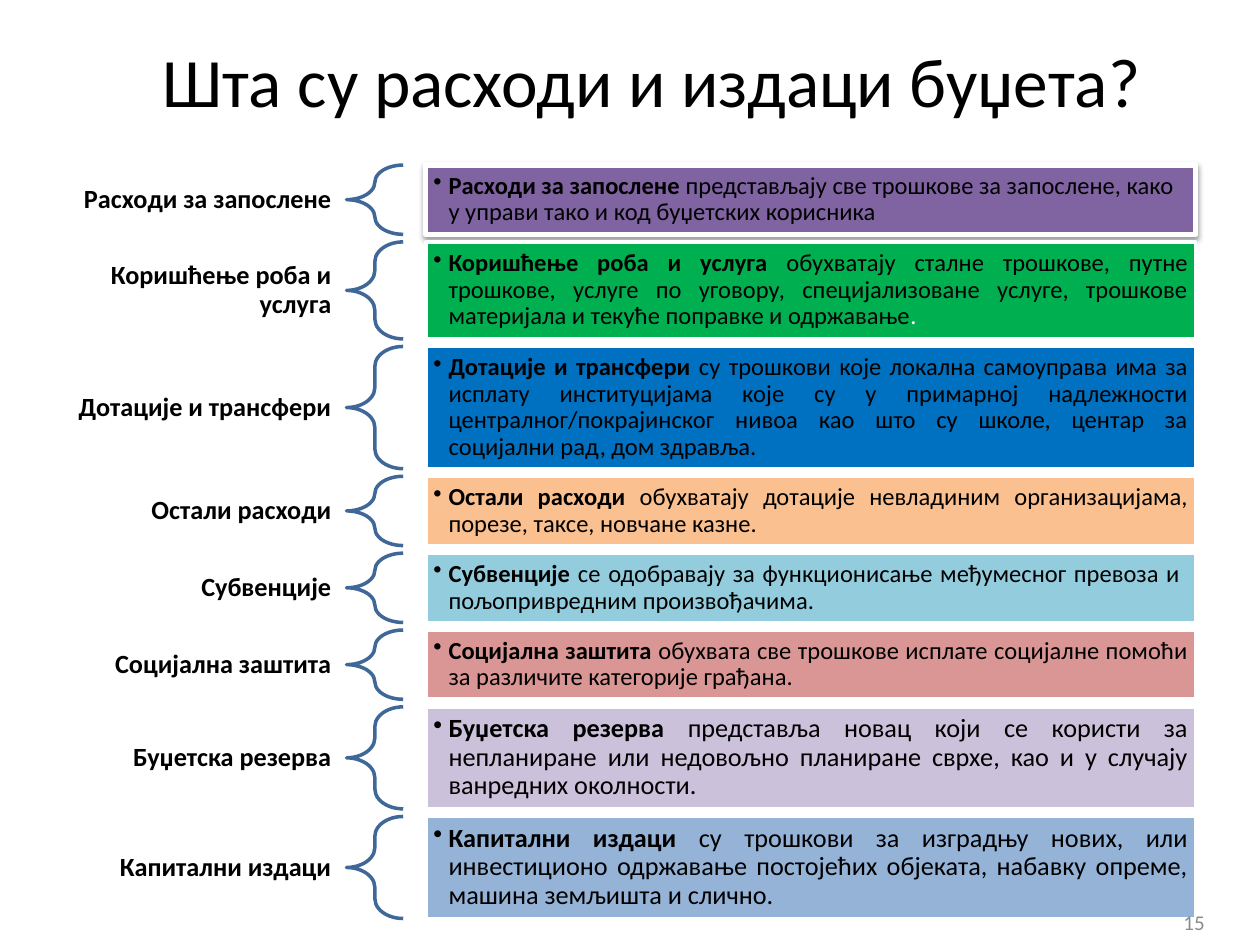
"""Build the slide that explains budget expenditures."""
import lxml.etree
import pptx
import pptx.dml.color
import pptx.enum.shapes
import pptx.enum.text
import pptx.oxml
import pptx.oxml.ns
import pptx.util

Inches = pptx.util.Inches
Pt = pptx.util.Pt
RGBColor = pptx.dml.color.RGBColor
SHAPE = pptx.enum.shapes.MSO_SHAPE
ALIGN = pptx.enum.text.PP_ALIGN
MIDDLE = pptx.enum.text.MSO_ANCHOR.MIDDLE
NO_FIT = pptx.enum.text.MSO_AUTO_SIZE.NONE

BLACK = RGBColor(0x00, 0x00, 0x00)
WHITE = RGBColor(0xFF, 0xFF, 0xFF)
GREY = RGBColor(0x8C, 0x8C, 0x8C)
BRACE_BLUE = RGBColor(0x3F, 0x67, 0x97)
PURPLE = RGBColor(0x80, 0x64, 0xA2)
GREEN = RGBColor(0x00, 0xB0, 0x50)
BLUE = RGBColor(0x00, 0x70, 0xC0)
ORANGE = RGBColor(0xFA, 0xC0, 0x90)
AQUA = RGBColor(0x93, 0xCD, 0xDD)
ROSE = RGBColor(0xD9, 0x96, 0x94)
LILAC = RGBColor(0xCC, 0xC1, 0xDA)
SKY = RGBColor(0x95, 0xB3, 0xD7)

FIRST_TOP = 1.31
ROW_GAP = 0.06

# term, explanation, row height, label height, fill, text size
EXPENSES = [
    ("Расходи за запослене", " представљају све трошкове за запослене, како у управи "
     "тако и код буџетских корисника", 0.55, 0.32, PURPLE, 14),
    ("Коришћење роба и услуга", " обухватају сталне трошкове, путне трошкове, услуге по "
     "уговору, специјализоване услуге, трошкове материјала и текуће поправке и одржавање",
     0.77, 0.55, GREEN, 14),
    ("Дотације и трансфери", " су трошкови које локална самоуправа има за исплату "
     "институцијама које су у примарној надлежности централног/покрајинског нивоа као што "
     "су школе, центар за социјални рад, дом здравља. ", 0.97, 0.32, BLUE, 14),
    ("Остали расходи", " обухватају дотације невладиним организацијама, порезе, таксе, "
     "новчане казне.", 0.55, 0.32, ORANGE, 14),
    ("Субвенције", " сe одобравају за функционисање међумесног превоза и  "
     "пољопривредним произвођачима. ", 0.55, 0.32, AQUA, 14),
    ("Социјална заштита", " обухвата све трошкове исплате социјалне помоћи за различите "
     "категорије грађана.", 0.55, 0.32, ROSE, 14),
    ("Буџетска резерва", " представља новац који се користи за непланиране или недовољно "
     "планиране сврхе, као и у случају ванредних околности.", 0.81, 0.32, LILAC, 15),
    ("Капитални издаци", " су трошкови за изградњу нових, или инвестиционо одржавање "
     "постојећих објеката, набавку опреме, машина земљишта и слично.",
     0.81, 0.32, SKY, 15),
]


def apply_format(target, values):
    """Set each attribute named in values on target."""
    for attribute, value in values.items():
        setattr(target, attribute, value)


def format_frame(frame, side, top):
    """Wrap and centre a text frame vertically with the given insets."""
    apply_format(frame, {
        "word_wrap": True, "auto_size": NO_FIT, "vertical_anchor": MIDDLE,
        "margin_left": Inches(side), "margin_right": Inches(side),
        "margin_top": Inches(top), "margin_bottom": Inches(top),
    })


def add_run(paragraph, text, size, color=BLACK, bold=False):
    """Append a formatted run to a paragraph."""
    run = paragraph.add_run()
    run.text = text
    apply_format(run.font, {"name": "Calibri", "size": Pt(size), "bold": bold})
    run.font.color.rgb = color


def add_bullet(paragraph):
    """Give a paragraph a hanging round bullet."""
    properties = paragraph._p.get_or_add_pPr()
    properties.set("marL", str(Inches(0.12)))
    properties.set("indent", str(Inches(-0.12)))
    bullet = lxml.etree.SubElement(properties, pptx.oxml.ns.qn("a:buChar"))
    bullet.set("char", "•")


def add_shadow(shape):
    """Put a soft shadow below a shape."""
    effects = pptx.oxml.parse_xml(
        f'<a:effectLst {pptx.oxml.ns.nsdecls("a")}>'
        f'<a:outerShdw blurRad="{Pt(3.1)}" dist="{Pt(1.6)}" dir="5400000" rotWithShape="0">'
        '<a:srgbClr val="000000"><a:alpha val="38000"/></a:srgbClr>'
        '</a:outerShdw></a:effectLst>')
    properties = shape._element.spPr
    properties.replace(properties.find(pptx.oxml.ns.qn("a:effectLst")), effects)


def add_title(slide, text):
    """Fill and place the title placeholder."""
    title = slide.shapes.title
    apply_format(title, {"left": Inches(0.67), "top": Inches(0.29),
                         "width": Inches(9), "height": Inches(0.68)})
    format_frame(title.text_frame, 0.1, 0.05)
    paragraph = title.text_frame.paragraphs[0]
    paragraph.alignment = ALIGN.CENTER
    add_run(paragraph, text, 39.6)


def add_label(slide, term, middle, height):
    """Add the bold term to the left of its brace."""
    label = slide.shapes.add_textbox(
        Inches(0.5), Inches(middle - height / 2), Inches(2.25), Inches(height))
    format_frame(label.text_frame, 0.12, 0.04)
    paragraph = label.text_frame.paragraphs[0]
    apply_format(paragraph, {"alignment": ALIGN.RIGHT, "line_spacing": 0.9})
    add_run(paragraph, term, 15, bold=True)


def add_brace(slide, top, height):
    """Add the brace that joins a term to its explanation."""
    brace = slide.shapes.add_shape(
        SHAPE.LEFT_BRACE, Inches(2.75), Inches(top), Inches(0.45), Inches(height))
    brace.shadow.inherit = False
    brace.adjustments[0] = 0.35
    brace.adjustments[1] = 0.5
    brace.fill.background()
    brace.line.color.rgb = BRACE_BLUE
    brace.line.width = Pt(2)


def add_explanation(slide, term, explanation, top, height, fill, size):
    """Add a filled box with the bulleted explanation and return it."""
    box = slide.shapes.add_shape(
        SHAPE.RECTANGLE, Inches(3.38), Inches(top), Inches(6.11), Inches(height))
    box.shadow.inherit = False
    box.fill.solid()
    box.fill.fore_color.rgb = fill
    box.line.color.rgb = WHITE
    box.line.width = Pt(2)
    format_frame(box.text_frame, 0.06, 0.06)
    paragraph = box.text_frame.paragraphs[0]
    apply_format(paragraph, {"alignment": ALIGN.JUSTIFY, "level": 1, "line_spacing": 0.9})
    add_bullet(paragraph)
    add_run(paragraph, term, size, bold=True)
    add_run(paragraph, explanation, size)
    return box


def add_page_number(slide, number):
    """Add the page number at the lower right."""
    page = slide.shapes.add_textbox(Inches(7.33), Inches(7.12), Inches(2.33), Inches(0.4))
    format_frame(page.text_frame, 0.1, 0.05)
    paragraph = page.text_frame.paragraphs[0]
    paragraph.alignment = ALIGN.RIGHT
    add_run(paragraph, number, 12, GREY)


def main():
    """Build and save the presentation."""
    presentation = pptx.Presentation()
    apply_format(presentation, {"slide_width": Inches(10), "slide_height": Inches(7.5)})
    slide = presentation.slides.add_slide(presentation.slide_layouts[5])
    add_title(slide, "Шта су расходи и издаци буџета?")
    top = FIRST_TOP
    boxes = []
    for term, explanation, height, label_height, fill, size in EXPENSES:
        add_label(slide, term, top + height / 2, label_height)
        add_brace(slide, top, height)
        boxes.append(add_explanation(slide, term, explanation, top, height, fill, size))
        top += height + ROW_GAP
    staff, goods = boxes[:2]
    staff.line.width = Pt(3)
    staff.text_frame.paragraphs[0].alignment = ALIGN.LEFT
    add_shadow(staff)
    add_run(goods.text_frame.paragraphs[0], ".", 14, WHITE)
    add_page_number(slide, "15")
    presentation.save("out.pptx")


if __name__ == "__main__":
    main()
